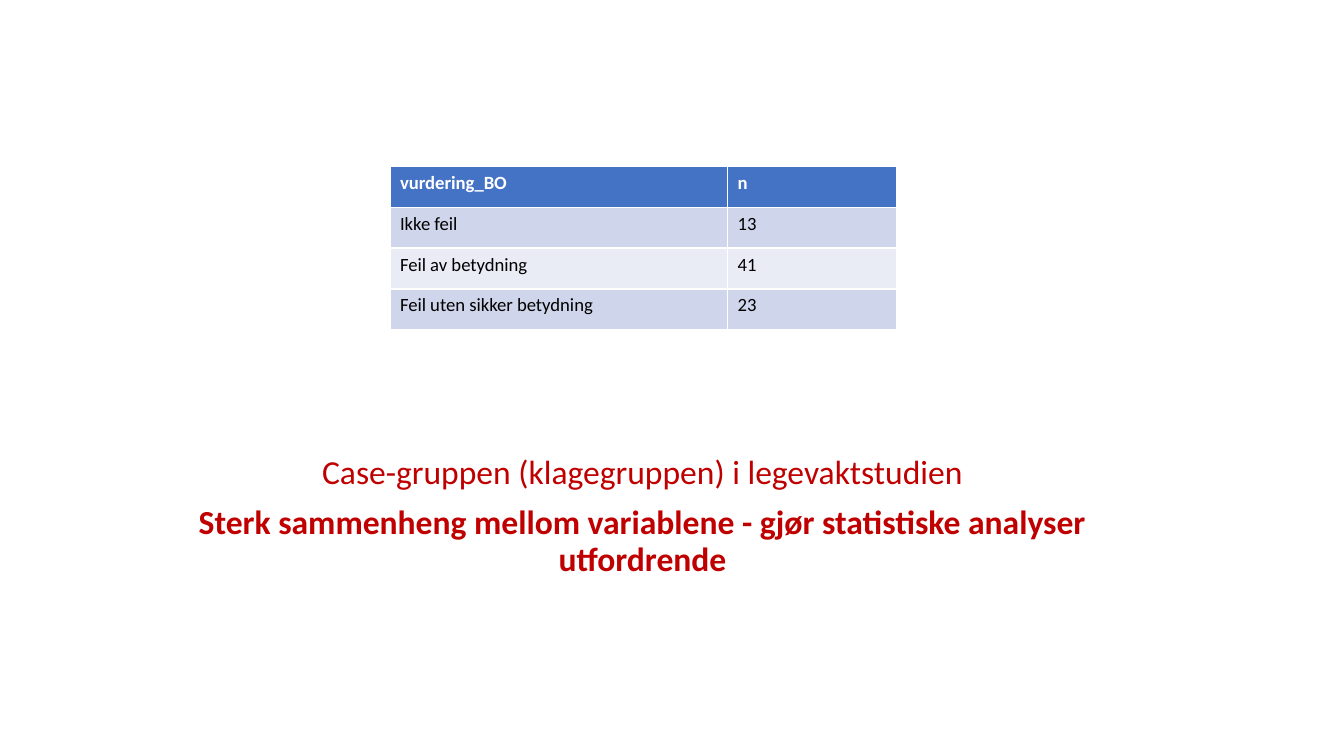
from pptx import Presentation
from pptx.dml.color import RGBColor
from pptx.enum.text import PP_ALIGN
from pptx.util import Cm, Pt

CENTER = PP_ALIGN.CENTER
FONT = "Calibri"
COLORS = {
    "header": "4472C4",
    "odd_row": "CFD5EA",
    "even_row": "E9EBF5",
    "header_text": "FFFFFF",
    "body_text": "000000",
    "message": "C00000",
}
MARGINS = {
    "margin_left": Cm(0.19),
    "margin_right": Cm(0.19),
    "margin_top": Cm(0.1),
    "margin_bottom": Cm(0.1),
}


def set_values(target, values):
    for name, value in values.items():
        setattr(target, name, value)


def add_span(para, text, size, bold, color):
    span = para.add_run()
    span.text = text
    set_values(span.font, {"name": FONT, "size": Pt(size), "bold": bold})
    span.font.color.rgb = RGBColor.from_string(COLORS[color])


deck = Presentation()
deck.slide_width, deck.slide_height = Cm(25.4), Cm(14.29)
page = deck.slides.add_slide(deck.slide_layouts[6])

# Message below the table
box = page.shapes.add_textbox(Cm(2.62), Cm(8.51), Cm(19.05), Cm(2.64))
frame = box.text_frame
set_values(frame, {"word_wrap": True, **MARGINS})
messages = [
    ("Case-gruppen (klagegruppen) i legevaktstudien", False),
    ("Sterk sammenheng mellom variablene - gjør statistiske analyser utfordrende", True),
]
for index, (text, bold) in enumerate(messages):
    para = frame.add_paragraph() if index else frame.paragraphs[0]
    set_values(para, {"alignment": CENTER, "line_spacing": 0.9,
                      "space_before": Pt(7.5 if index else 0)})
    add_span(para, text, 18, bold, "message")

# Assessment counts; the default table style draws the white borders
rows = [
    ("vurdering_BO", "n"),
    ("Ikke feil", "13"),
    ("Feil av betydning", "41"),
    ("Feil uten sikker betydning", "23"),
]
column_widths = [Cm(6.38), Cm(3.2)]
row_height = Cm(0.77)
table = page.shapes.add_table(len(rows), len(column_widths), Cm(7.37), Cm(3.15),
                              sum(column_widths), row_height * len(rows)).table
for column, width in zip(table.columns, column_widths):
    column.width = width

for row_index, values in enumerate(rows):
    is_header = row_index == 0
    fill = "header" if is_header else "odd_row" if row_index % 2 else "even_row"
    text_color = "header_text" if is_header else "body_text"
    for column_index, value in enumerate(values):
        cell = table.cell(row_index, column_index)
        set_values(cell, MARGINS)
        cell.fill.solid()
        cell.fill.fore_color.rgb = RGBColor.from_string(COLORS[fill])
        add_span(cell.text_frame.paragraphs[0], value, 10, is_header, text_color)

deck.save("out.pptx")
